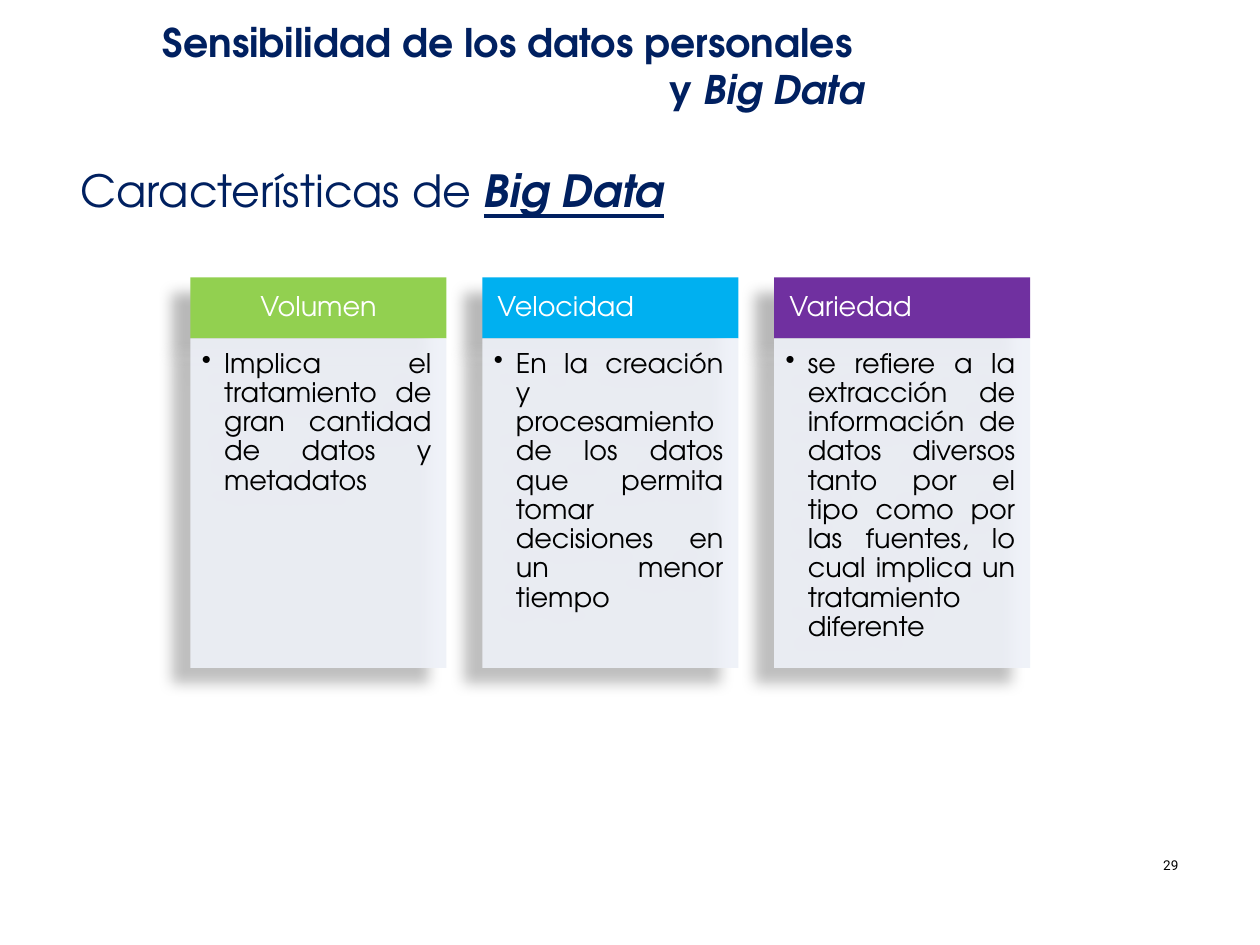
import pptx
import pptx.util
import pptx.dml.color
import pptx.enum.shapes
import pptx.enum.text
import pptx.oxml
import pptx.oxml.ns

Pt = pptx.util.Pt
ALIGN = pptx.enum.text.PP_ALIGN
ANCHOR = pptx.enum.text.MSO_ANCHOR
NS = pptx.oxml.ns.nsdecls("a")

ADVENTOR = "TeX Gyre Adventor"
NAVY = "002060"
CARD_LEFT, CARD_STEP, CARD_WIDTH = 154.8, 237.2, 208.1
HEAD_TOP, HEAD_HEIGHT, BODY_HEIGHT = 225.4, 49.6, 267.8

CARDS = [
    ("Volumen", "92D050", ALIGN.CENTER,
     "Implica el tratamiento de gran cantidad de datos y metadatos"),
    ("Velocidad", "00B0F0", ALIGN.JUSTIFY,
     "En la creación y procesamiento de los datos que permita tomar "
     "decisiones en un menor tiempo"),
    ("Variedad", "7030A0", ALIGN.JUSTIFY,
     "se refiere a la extracción de información de datos diversos tanto "
     "por el tipo como por las fuentes, lo cual implica un tratamiento "
     "diferente"),
]


def rgb(color):
    return pptx.dml.color.RGBColor.from_string(color)


def set_attrs(obj, values):
    for name, value in values.items():
        setattr(obj, name, value)


def set_frame(tf, insets, **values):
    sides = ("left", "top", "right", "bottom")
    set_attrs(tf, {f"margin_{side}": Pt(inset) for side, inset in zip(sides, insets)})
    set_attrs(tf, values)


def add_run(p, text, color, size, name=ADVENTOR, **values):
    r = p.add_run()
    r.text = text
    set_attrs(r.font, {"name": name, "size": Pt(size), **values})
    r.font.color.rgb = rgb(color)


def add_text(s, left, top, width, height, insets=(7.2, 3.6, 7.2, 3.6), **values):
    tf = s.shapes.add_textbox(Pt(left), Pt(top), Pt(width), Pt(height)).text_frame
    set_frame(tf, insets, **{"word_wrap": True, **values})
    return tf


def add_shadow(sp):
    sp._element.spPr.append(pptx.oxml.parse_xml(
        f'<a:effectLst {NS}><a:outerShdw blurRad="{Pt(11.8)}" dist="{Pt(19.7)}" '
        f'dir="{141 * 60000}" algn="ctr" rotWithShape="0"><a:srgbClr val="000000">'
        '<a:alpha val="28000"/></a:srgbClr></a:outerShdw></a:effectLst>'))


def add_panel(s, left, top, height, fill, text, color, align, insets, anchor):
    sp = s.shapes.add_shape(pptx.enum.shapes.MSO_SHAPE.RECTANGLE,
                            Pt(left), Pt(top), Pt(CARD_WIDTH), Pt(height))
    sp.fill.solid()
    sp.fill.fore_color.rgb = rgb(fill)
    sp.line.fill.background()
    add_shadow(sp)
    set_frame(sp.text_frame, insets, word_wrap=True, vertical_anchor=anchor)
    p = sp.text_frame.paragraphs[0]
    set_attrs(p, {"alignment": align, "line_spacing": 0.9})
    add_run(p, text, color, 22)
    return sp


def add_bullet(p, indent):
    pPr = p._p.get_or_add_pPr()
    pPr.set("marL", str(Pt(indent)))
    pPr.set("indent", str(Pt(-indent)))
    pPr.append(pptx.oxml.parse_xml(f'<a:buChar {NS} char="•"/>'))


def set_transparency(sp, opacity):
    color = sp._element.spPr.find(".//" + pptx.oxml.ns.qn("a:srgbClr"))
    color.append(pptx.oxml.parse_xml(f'<a:alpha {NS} val="{opacity * 1000}"/>'))


def add_card(s, left, heading, fill, align, text):
    add_panel(s, left, HEAD_TOP, HEAD_HEIGHT, fill, heading, "FFFFFF", align,
              (12.3, 7, 12.3, 7), ANCHOR.MIDDLE)
    body = add_panel(s, left, HEAD_TOP + HEAD_HEIGHT, BODY_HEIGHT, "EEF1F8", text,
                     "000000", ALIGN.JUSTIFY, (9.3, 9.3, 12.3, 13.9), ANCHOR.TOP)
    set_transparency(body, 90)
    add_bullet(body.text_frame.paragraphs[0], 18)


def main():
    prs = pptx.Presentation()
    prs.slide_width, prs.slide_height = Pt(1024), Pt(768)
    s = prs.slides.add_slide(prs.slide_layouts[6])

    # Title
    tf = add_text(s, 122.4, 10.1, 583.9, 85.7, (4, 4, 4, 4), word_wrap=False,
                  vertical_anchor=ANCHOR.MIDDLE)
    first, second = tf.paragraphs[0], tf.add_paragraph()
    first.alignment = second.alignment = ALIGN.RIGHT
    add_run(first, "Sensibilidad de los datos personales ", NAVY, 32, bold=True)
    add_run(second, "y ", NAVY, 32, bold=True)
    add_run(second, "Big Data", NAVY, 32, bold=True, italic=True)

    # Subtitle
    p = add_text(s, 58.3, 128.9, 572.4, 51.1).paragraphs[0]
    add_run(p, "Características de ", NAVY, 36)
    add_run(p, "Big Data", NAVY, 36, bold=True, italic=True, underline=True)

    # Characteristic cards
    for i, card in enumerate(CARDS):
        add_card(s, CARD_LEFT + i * CARD_STEP, *card)

    # Page number
    p = add_text(s, 938.2, 692.6, 73.4, 20.9).paragraphs[0]
    add_run(p, "29", "000000", 11, "Roboto")

    prs.save("out.pptx")


if __name__ == "__main__":
    main()
